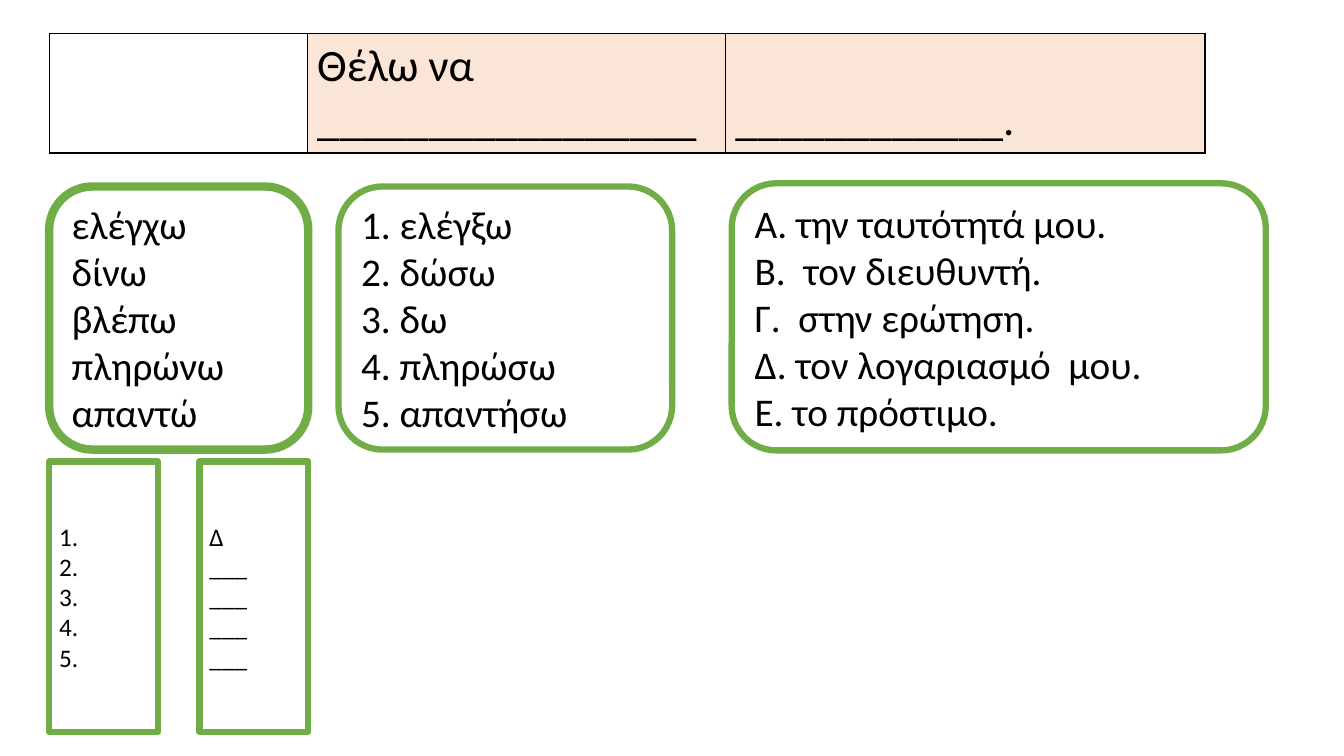
"""Builds a Greek verb practice slide: sentence frame, word boxes and answer boxes."""
from lxml import etree
from pptx import Presentation, util as u
from pptx.dml.color import RGBColor
from pptx.enum import shapes, text
from pptx.oxml.ns import qn

HUES = {"ink": "000000", "white": "FFFFFF", "green": "70AD47", "peach": "FBE5D6"}


def hue(name):
    return RGBColor.from_string(HUES[name])


def write(frame, lines, size):
    for i, line in enumerate(lines):
        para = frame.paragraphs[0] if i == 0 else frame.add_paragraph()
        para.alignment = text.PP_ALIGN.LEFT
        run = para.add_run()
        run.text = line
        run.font.name = "Calibri"
        run.font.size = u.Pt(size)
        run.font.color.rgb = hue("ink")


deck = Presentation()
deck.slide_width, deck.slide_height = u.Cm(33.87), u.Cm(19.05)
slide = deck.slides.add_slide(deck.slide_layouts[6])

cols = [
    (6.5, "white", ""),
    (10.54, "peach", "Θέλω να _________________"),
    (12.09, "peach", "____________."),
]
wide = sum(col[0] for col in cols)
table = slide.shapes.add_table(1, len(cols), u.Cm(1.24), u.Cm(0.84), u.Cm(wide), u.Cm(2.97)).table
table.first_row = table.horz_banding = False
for i, (width, fill, words) in enumerate(cols):
    table.columns[i].width = u.Cm(width)
    cell = table.cell(0, i)
    cell.vertical_anchor = text.MSO_ANCHOR.BOTTOM
    cell.fill.solid()
    cell.fill.fore_color.rgb = hue(fill)
    if words:
        write(cell.text_frame, [words], 32)
    props = cell._tc.get_or_add_tcPr()
    for n, side in enumerate(("a:lnL", "a:lnR", "a:lnT", "a:lnB")):
        edge = etree.Element(qn(side), w=str(u.Pt(1)))
        solid = etree.SubElement(edge, qn("a:solidFill"))
        etree.SubElement(solid, qn("a:srgbClr"), val=HUES["ink"])
        props.insert(n, edge)

rect = shapes.MSO_SHAPE.RECTANGLE
round_ = shapes.MSO_SHAPE.ROUNDED_RECTANGLE
boxes = [
    (rect, 1.24, 11.63, 2.74, 6.81, 4.5, 18, [f"{n}." for n in range(1, 6)]),
    (rect, 5.03, 11.63, 2.74, 6.81, 4.5, 18, ["Δ"] + ["___"] * 4),
    (round_, 1.24, 4.7, 6.53, 6.63, 6, 28,
     ["ελέγχω", "δίνω", "βλέπω", "πληρώνω", "απαντώ"]),
    (round_, 8.53, 4.7, 8.41, 6.63, 4.5, 28,
     ["1. ελέγξω", "2. δώσω", "3. δω", "4. πληρώσω", "5. απαντήσω"]),
    (round_, 18.44, 4.62, 13.46, 6.73, 4.5, 28,
     ["Α. την ταυτότητά μου.", "Β.  τον διευθυντή.", "Γ.  στην ερώτηση.",
      "Δ. τον λογαριασμό  μου.", "Ε. το πρόστιμο."]),
]
for kind, left, top, width, height, line, size, lines in boxes:
    box = slide.shapes.add_shape(kind, u.Cm(left), u.Cm(top), u.Cm(width), u.Cm(height))
    box.shadow.inherit = False
    box.fill.solid()
    box.fill.fore_color.rgb = hue("white")
    box.line.color.rgb = hue("green")
    box.line.width = u.Pt(line)
    frame = box.text_frame
    frame.word_wrap = True
    frame.vertical_anchor = text.MSO_ANCHOR.MIDDLE
    write(frame, lines, size)

deck.save("out.pptx")
